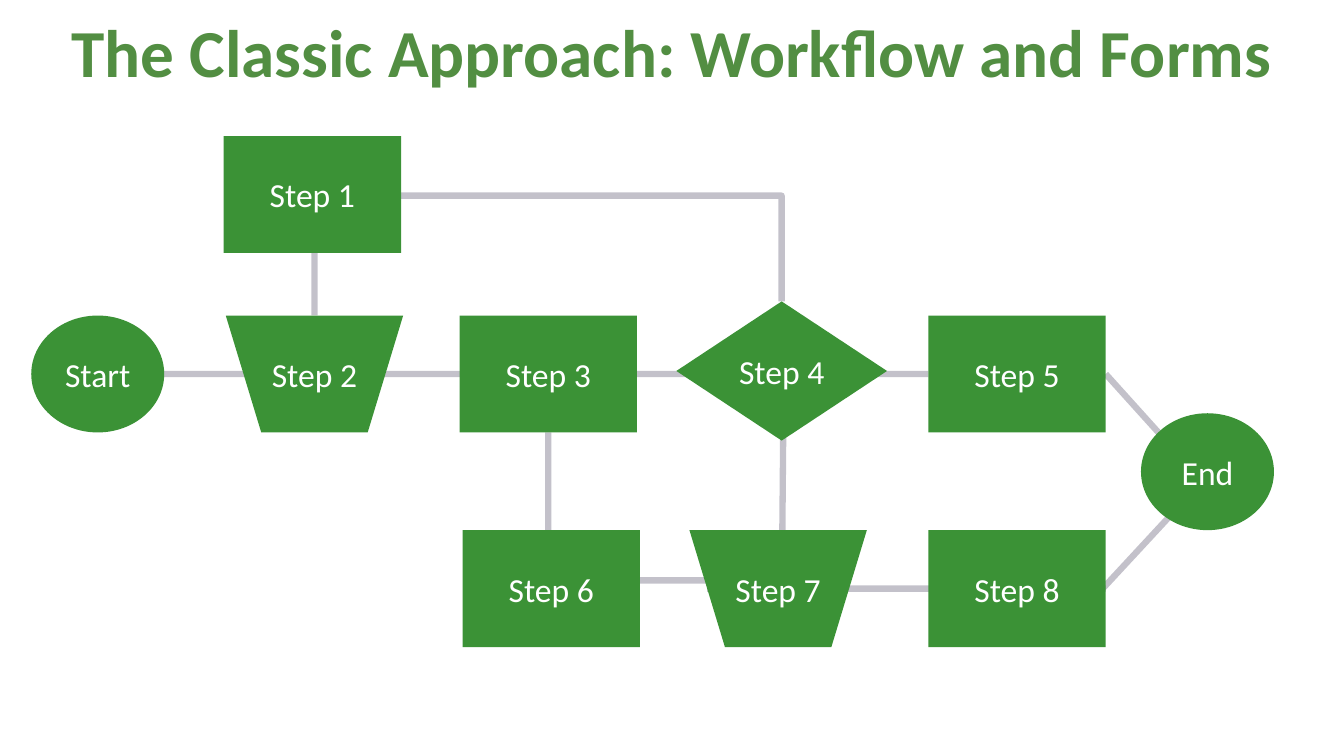
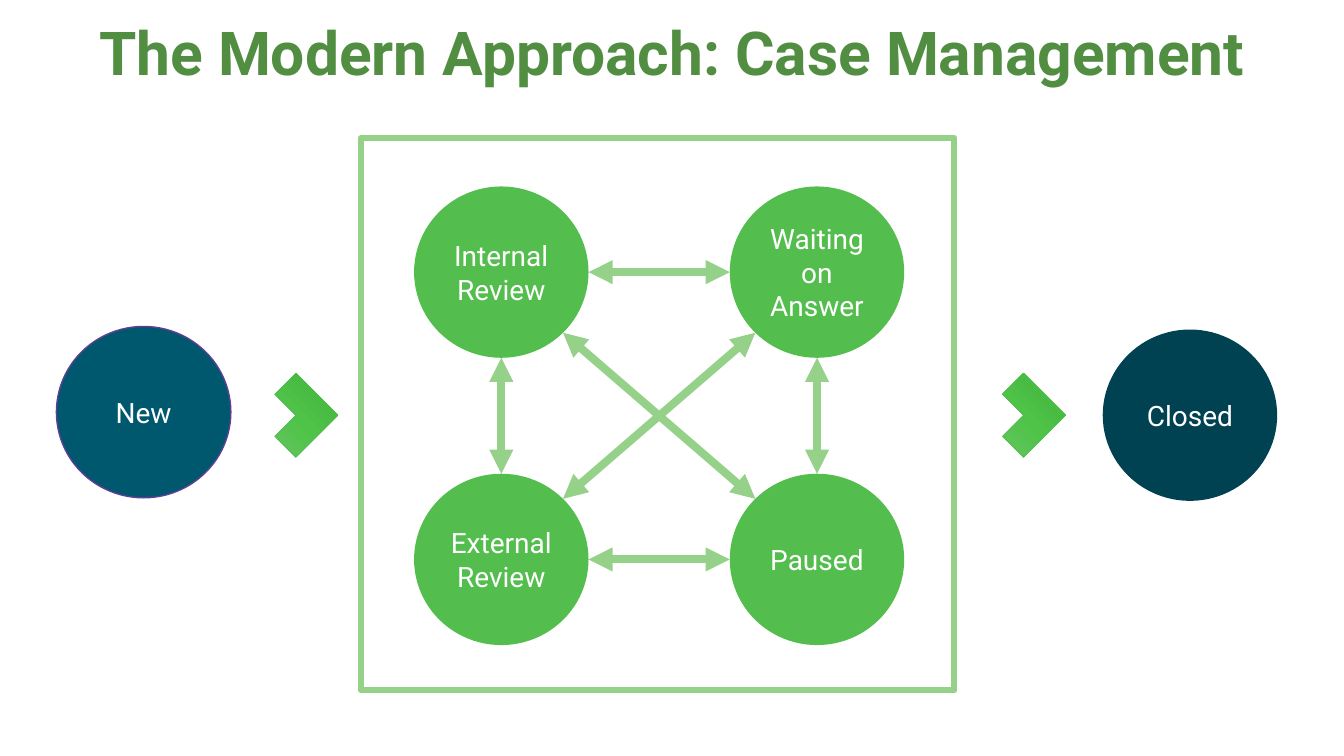
"""Build two slides that contrast a fixed workflow with case management."""
from copy import deepcopy
from math import sqrt

from lxml import etree
from pptx import Presentation
from pptx.dml.color import RGBColor
from pptx.enum.shapes import MSO_CONNECTOR, MSO_SHAPE
from pptx.enum.text import MSO_ANCHOR, PP_ALIGN
from pptx.oxml.ns import qn
from pptx.util import Pt

RECT, OVAL, DIAMOND = MSO_SHAPE.RECTANGLE, MSO_SHAPE.OVAL, MSO_SHAPE.DIAMOND
MANUAL, CORNER = MSO_SHAPE.FLOWCHART_MANUAL_OPERATION, MSO_SHAPE.CORNER
STRAIGHT, ELBOW = MSO_CONNECTOR.STRAIGHT, MSO_CONNECTOR.ELBOW
MIDDLE, CENTER = MSO_ANCHOR.MIDDLE, PP_ALIGN.CENTER
LEFT_SIDE, RIGHT_SIDE = 1, 3

WIDTH, HEIGHT = 960, 540
WHITE, TITLE_GREEN = "FFFFFF", "528E42"
STEP_GREEN, LINK_NAVY, LINK_OPACITY = "3B9236", "292344", 28
STATE_GREEN, PALE_GREEN = "53BD4E", "95D189"
NEW_TEAL, NEW_EDGE, CLOSED_TEAL = "00586E", "5D4092", "004252"
CHEVRON_STOPS = ("6BC568", "4EC348", "40B33A")
STEP_SIZE, TERMINAL_SIZE, DECISION_SIZE = (126.7, 83.5), (95, 83.5), (150.5, 99.4)
STATE_SIZE, CHEVRON_SIDE = (124.6, 122.4), 42.5
DIAGONAL = sqrt(0.5)


def rgb(code):
    """Turn a hex string into a colour."""
    return RGBColor.from_string(code)


def write(shape, text, font, size, color, bold=False):
    """Put centred text in a shape and format it."""
    frame = shape.text_frame
    frame.word_wrap = True
    frame.vertical_anchor = MIDDLE
    frame.text = text
    paragraph = frame.paragraphs[0]
    paragraph.alignment = CENTER
    style = paragraph.runs[0].font
    style.name, style.size, style.bold = font, Pt(size), bold
    style.color.rgb = rgb(color)
    return paragraph


def add_title(slide, text, font, size):
    """Place the slide title across the top."""
    title = slide.shapes.add_textbox(0, Pt(-5), Pt(WIDTH), Pt(90))
    write(title, text, font, size, TITLE_GREEN, True).line_spacing = 0.9


def add_figure(slide, kind, left, top, size, fill, edge=None, weight=1):
    """Draw a flat preset shape."""
    figure = slide.shapes.add_shape(kind, Pt(left), Pt(top), Pt(size[0]), Pt(size[1]))
    figure.shadow.inherit = False
    figure.fill.solid()
    figure.fill.fore_color.rgb = rgb(fill)
    if edge:
        figure.line.color.rgb = rgb(edge)
        figure.line.width = Pt(weight)
    else:
        figure.line.fill.background()
    return figure


def spot(shape, across, down):
    """Give a point of a shape in points, from fractions of its size."""
    return ((shape.left + across * shape.width) / Pt(1),
            (shape.top + down * shape.height) / Pt(1))


def add_link(slide, begin, end, color, weight, kind=STRAIGHT):
    """Draw a connector without shadow between two points."""
    link = slide.shapes.add_connector(kind, *(Pt(value) for value in (*begin, *end)))
    link.line.color.rgb = rgb(color)
    link.line.width = Pt(weight)
    etree.SubElement(link._element.spPr, qn("a:effectLst"))
    return link


def add_flow_link(slide, begin, end, kind=STRAIGHT):
    """Draw a translucent workflow line behind the steps."""
    link = add_link(slide, begin, end, LINK_NAVY, 4.5, kind)
    color = link._element.spPr.find(".//" + qn("a:srgbClr"))
    etree.SubElement(color, qn("a:alpha"), val=str(LINK_OPACITY * 1000))
    link._element.getparent().insert(2, link._element)
    return link


def add_corner_link(slide, begin, end):
    """Draw a line that runs sideways and then turns once."""
    link = add_flow_link(slide, begin, end, ELBOW)
    link._element.spPr.find(qn("a:prstGeom")).set("prst", "bentConnector2")


def add_overhead_link(slide, begin, end, rise):
    """Draw a line that climbs by rise, runs across and comes down."""
    middle_x, middle_y = (begin[0] + end[0]) / 2, (begin[1] + end[1]) / 2
    turned = [(middle_x + y - middle_y, middle_y - x + middle_x) for x, y in (begin, end)]
    link = add_flow_link(slide, *turned, ELBOW)
    properties = link._element.spPr
    properties.find(qn("a:xfrm")).set("rot", str(90 * 60000))
    geometry = properties.find(qn("a:prstGeom"))
    guides = geometry.find(qn("a:avLst"))
    if guides is None:
        guides = etree.SubElement(geometry, qn("a:avLst"))
    share = round(rise / (begin[1] - end[1]) * 100000)
    etree.SubElement(guides, qn("a:gd"), name="adj1", fmla=f"val {share}")


def add_workflow(slide, left, top):
    """Draw the workflow chart from its top left corner."""
    middle_row, low_row = 128.2, 281.5
    layout = {
        "Start": (OVAL, 0, middle_row, TERMINAL_SIZE),
        "Step 1": (RECT, 137.5, 0, STEP_SIZE),
        "Step 2": (MANUAL, 139, middle_row, STEP_SIZE),
        "Step 3": (RECT, 306, middle_row, STEP_SIZE),
        "Step 4": (DIAMOND, 460.8, 118.1, DECISION_SIZE),
        "Step 5": (RECT, 640.8, middle_row, STEP_SIZE),
        "Step 6": (RECT, 308.2, low_row, STEP_SIZE),
        "Step 7": (MANUAL, 470.2, low_row, STEP_SIZE),
        "Step 8": (RECT, 640.8, low_row, STEP_SIZE),
        "End": (OVAL, 792.7, 198, TERMINAL_SIZE),
    }
    steps = {}
    for label, (kind, x, y, size) in layout.items():
        steps[label] = add_figure(slide, kind, left + x, top + y, size, STEP_GREEN)
        write(steps[label], label, "Calibri", 24, WHITE)

    main_line = add_flow_link(slide, spot(steps["Start"], 1, 0.5), spot(steps["Step 5"], 0, 0.5))
    main_line.end_connect(steps["Step 5"], LEFT_SIDE)
    low_line = add_flow_link(slide, spot(steps["Step 8"], 1, 0.5), spot(steps["Step 7"], 0.1, 0.5))
    low_line.begin_connect(steps["Step 8"], RIGHT_SIDE)
    finish = add_flow_link(slide, spot(steps["Step 5"], 1, 0.5), spot(steps["End"], 0.5, 0.63))
    finish.begin_connect(steps["Step 5"], RIGHT_SIDE)
    add_flow_link(slide, (left + 756.7, top + 332.6), spot(steps["End"], 0.38, 0.68))
    add_flow_link(slide, spot(steps["Step 4"], 0.51, 0.5), spot(steps["Step 7"], 0.52, 0.61))
    add_corner_link(slide, spot(steps["Step 7"], 0.6, 0.43), spot(steps["Step 3"], 0.5, 1))
    add_overhead_link(slide, spot(steps["Step 2"], 0.5, 0), spot(steps["Step 4"], 0.5, 0), 85.7)


def add_state(slide, label, left, top, fill, edge=None):
    """Draw one round case state."""
    state = add_figure(slide, OVAL, left, top, STATE_SIZE, fill, edge)
    write(state, label, "Roboto", 20, WHITE)
    return state


def add_exchange(slide, first, second):
    """Join the facing rims of two states with a two-headed arrow."""
    ends = []
    for here, there in ((first, second), (second, first)):
        side_x = (there.left > here.left) - (there.left < here.left)
        side_y = (there.top > here.top) - (there.top < here.top)
        reach = DIAGONAL / 2 if side_x and side_y else 0.5
        ends.append(spot(here, 0.5 + side_x * reach, 0.5 + side_y * reach))
    arrow = add_link(slide, *ends, PALE_GREEN, 5.75)
    outline = arrow._element.spPr.find(qn("a:ln"))
    for tip in ("a:headEnd", "a:tailEnd"):
        etree.SubElement(outline, qn(tip), type="triangle")


def add_chevron(slide, left, top):
    """Draw a gradient chevron that points right."""
    chevron = add_figure(slide, CORNER, left, top, (CHEVRON_SIDE, CHEVRON_SIDE),
                         STATE_GREEN, STATE_GREEN, 0.5)
    chevron.rotation = 225
    chevron.fill.gradient()
    chevron.fill.gradient_angle = 270
    stops = chevron._element.spPr.find(".//" + qn("a:gsLst"))
    stops.append(deepcopy(stops[0]))
    for index, (stop, code) in enumerate(zip(chevron.fill.gradient_stops, CHEVRON_STOPS)):
        stop.color.rgb = rgb(code)
        stop.position = index / 2


def add_case_board(slide, left, top, width, height):
    """Draw the framed states and the arrows among them."""
    add_figure(slide, RECT, left, top, (width, height), WHITE, PALE_GREEN, 4.25)
    labels = ("Internal Review", "Waiting on Answer", "External Review", "Paused")
    states = [
        add_state(slide, label, left + 38 + index % 2 * 225.5,
                  top + 34.6 + index // 2 * 205.2, STATE_GREEN)
        for index, label in enumerate(labels)
    ]
    for first, second in ((0, 3), (1, 2), (0, 2), (0, 1), (1, 3), (2, 3)):
        add_exchange(slide, states[first], states[second])


def add_case_flow(slide, left, top):
    """Draw the path from a new case through the board to a closed one."""
    add_case_board(slide, left + 217.5, top, 424, 394.6)
    add_state(slide, "New", left, top + 134.6, NEW_TEAL, NEW_EDGE)
    add_state(slide, "Closed", left + 747.4, top + 136.8, CLOSED_TEAL)
    for offset in (149.8, 669.6):
        add_chevron(slide, left + offset, top + 176.7)


def main():
    """Build and save the presentation."""
    deck = Presentation()
    deck.slide_width, deck.slide_height = Pt(WIDTH), Pt(HEIGHT)
    blank = deck.slide_layouts[6]
    classic = deck.slides.add_slide(blank)
    add_title(classic, "The Classic Approach: Workflow and Forms", "Calibri", 48)
    add_workflow(classic, 22.3, 97.2)
    modern = deck.slides.add_slide(blank)
    add_title(modern, "The Modern Approach: Case Management", "Roboto", 43.2)
    add_case_flow(modern, 40.3, 98.6)
    deck.save("out.pptx")


if __name__ == "__main__":
    main()
